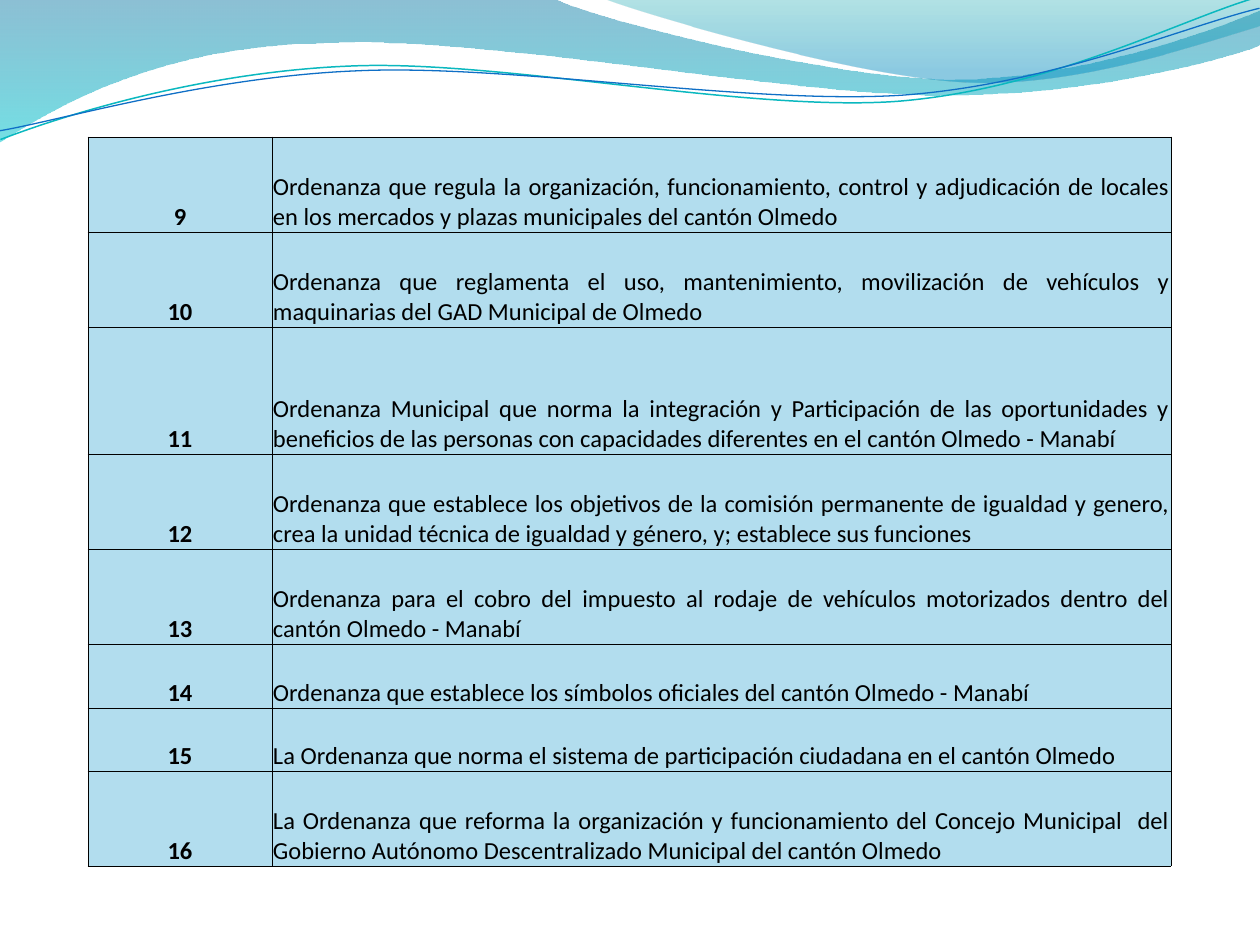
import lxml.etree
import pptx
import pptx.dml.color
import pptx.enum.text
import pptx.oxml.ns
import pptx.util

PX = 914400 // 126
COLORS = {
    "cell": "B2DDEE",
    "black": "000000",
    "deep_blue": "0074A1",
    "cyan": "00C6CF",
    "teal": "00A1A9",
    "sky": "008BBF",
    "teal_line": "0AB8BF",
    "blue_line": "0F6FC6",
}

# Each outline is a list of segments: one point is a line, three are a Bézier curve.
BAND = [
    [(0, 0)],
    [(554, -1)],
    [(600, 21), (837, 79), (955, 79)],
    [(1075, 79), (1207, 33), (1260, 11)],
    [(1261, 45)],
    [(1239, 55), (1096, 96), (940, 95)],
    [(784, 95), (481, 35), (324, 43)],
    [(163, 45), (58, 105), (-1, 142)],
    [(0, 0)],
]
VEIL = [
    [(604, -1)],
    [(641, 14), (859, 78), (969, 82)],
    [(1079, 87), (1211, 40), (1260, 26)],
    [(1260, 0)],
    [(604, -1)],
]
WAVE_ROTATION = 357.3
TEAL_WAVE = [
    [(-2, 110)],
    [(58, 90), (199, 52), (350, 53)],
    [(499, 53), (745, 118), (896, 114)],
    [(1049, 109), (1184, 45), (1260, 27)],
]
BLUE_WAVE = [
    [(-2, 101)],
    [(57, 94), (207, 57), (357, 58)],
    [(509, 58), (750, 111), (902, 108)],
    [(1052, 104), (1188, 52), (1262, 38)],
]

COLUMN_WIDTHS = [184, 899]
FIRST_NUMBER = 9
ORDINANCES = [
    (95, "Ordenanza que regula la organización, funcionamiento, control y adjudicación "
         "de locales en los mercados y plazas municipales del cantón Olmedo"),
    (95, "Ordenanza que reglamenta el uso, mantenimiento, movilización de vehículos y "
         "maquinarias del GAD Municipal de Olmedo"),
    (127, "Ordenanza Municipal que norma la integración y Participación de las "
          "oportunidades y beneficios de las personas con capacidades diferentes en el "
          "cantón Olmedo - Manabí"),
    (95, "Ordenanza que establece los objetivos de la comisión permanente de igualdad y "
         "genero, crea la unidad técnica de igualdad y género, y; establece sus funciones"),
    (95, "Ordenanza para el cobro del impuesto al rodaje de vehículos motorizados dentro "
         "del cantón Olmedo - Manabí"),
    (64, "Ordenanza que establece los símbolos oficiales del cantón Olmedo - Manabí"),
    (63, "La Ordenanza que norma el sistema de participación ciudadana en el cantón Olmedo"),
    (95, "La Ordenanza que reforma la organización y funcionamiento del Concejo "
         "Municipal  del Gobierno Autónomo Descentralizado Municipal del cantón Olmedo"),
]


def px(length):
    return pptx.util.Emu(length * PX)


def rgb(name):
    return pptx.dml.color.RGBColor.from_string(COLORS[name])


def bend_segments(shape, segments):
    """Join the three lines of each curved segment into one Bézier curve."""
    lines = iter(list(shape.element.spPr.iter(pptx.oxml.ns.qn("a:lnTo"))))
    for segment in segments:
        segment_lines = [next(lines) for _ in segment]
        if len(segment) == 3:
            curve = lxml.etree.Element(pptx.oxml.ns.qn("a:cubicBezTo"))
            segment_lines[0].addprevious(curve)
            for line in segment_lines:
                curve.append(line[0])
                line.getparent().remove(line)


def add_outline(shapes, segments, closed):
    points = [(px(x), px(y)) for segment in segments for x, y in segment]
    builder = shapes.build_freeform(*points[0])
    builder.add_line_segments(points[1:], close=closed)
    shape = builder.convert_to_shape()
    bend_segments(shape, segments[1:])
    shape.shadow.inherit = False
    return shape


def add_gradient_area(shapes, segments, stops):
    """Fill from top to bottom; each stop is position, colour name, opacity percent."""
    shape = add_outline(shapes, segments, closed=True)
    shape.line.fill.background()
    shape.fill.gradient()
    shape.fill.gradient_angle = 270
    for gradient_stop, (position, color, _) in zip(shape.fill.gradient_stops, stops):
        gradient_stop.position = position
        gradient_stop.color.rgb = rgb(color)
    color_elements = shape.element.spPr.iter(pptx.oxml.ns.qn("a:srgbClr"))
    for element, (_, _, opacity) in zip(color_elements, stops):
        alpha = lxml.etree.SubElement(element, pptx.oxml.ns.qn("a:alpha"))
        alpha.set("val", str(opacity * 1000))


def add_wave(shapes, segments, color, width):
    shape = add_outline(shapes, segments, closed=False)
    shape.rotation = WAVE_ROTATION
    shape.fill.background()
    shape.line.color.rgb = rgb(color)
    shape.line.width = pptx.util.Pt(width)


def set_borders(cell, color, width):
    properties = cell._tc.get_or_add_tcPr()
    for index, side in enumerate(("lnL", "lnR", "lnT", "lnB")):
        line = lxml.etree.Element(pptx.oxml.ns.qn(f"a:{side}"), w=str(pptx.util.Pt(width)))
        fill = lxml.etree.SubElement(line, pptx.oxml.ns.qn("a:solidFill"))
        lxml.etree.SubElement(fill, pptx.oxml.ns.qn("a:srgbClr"), val=COLORS[color])
        properties.insert(index, line)


def fill_cell(cell, text, alignment, bold):
    cell.fill.solid()
    cell.fill.fore_color.rgb = rgb("cell")
    cell.vertical_anchor = pptx.enum.text.MSO_ANCHOR.BOTTOM
    cell.margin_left = cell.margin_right = cell.margin_top = px(1)
    cell.margin_bottom = 0
    set_borders(cell, "black", 0.5)
    cell.text_frame.text = text
    paragraph = cell.text_frame.paragraphs[0]
    paragraph.alignment = alignment
    font = paragraph.runs[0].font
    font.name = "Calibri"
    font.size = pptx.util.Pt(14)
    font.bold = bold
    font.color.rgb = rgb("black")


def add_ordinance_table(slide, left, top):
    heights = [height for height, _ in ORDINANCES]
    table = slide.shapes.add_table(
        len(ORDINANCES), len(COLUMN_WIDTHS),
        px(left), px(top), px(sum(COLUMN_WIDTHS)), px(sum(heights)),
    ).table
    table.first_row = False
    table.horz_banding = False
    for column, width in zip(table.columns, COLUMN_WIDTHS):
        column.width = px(width)
    align = pptx.enum.text.PP_ALIGN
    for index, (height, title) in enumerate(ORDINANCES):
        table.rows[index].height = px(height)
        fill_cell(table.cell(index, 0), str(FIRST_NUMBER + index), align.CENTER, True)
        fill_cell(table.cell(index, 1), title, align.JUSTIFY, False)


def main():
    presentation = pptx.Presentation()
    presentation.slide_width = px(1260)
    presentation.slide_height = px(945)
    slide = presentation.slides.add_slide(presentation.slide_layouts[6])
    add_gradient_area(slide.shapes, BAND, [(0, "deep_blue", 45), (1, "cyan", 55)])
    add_gradient_area(slide.shapes, VEIL, [(0, "teal", 30), (0.8, "sky", 45)])
    waves = slide.shapes.add_group_shape()
    add_wave(waves.shapes, TEAL_WAVE, "teal_line", 0.85)
    add_wave(waves.shapes, BLUE_WAVE, "blue_line", 0.75)
    add_ordinance_table(slide, 88, 137)
    presentation.save("out.pptx")


if __name__ == "__main__":
    main()
